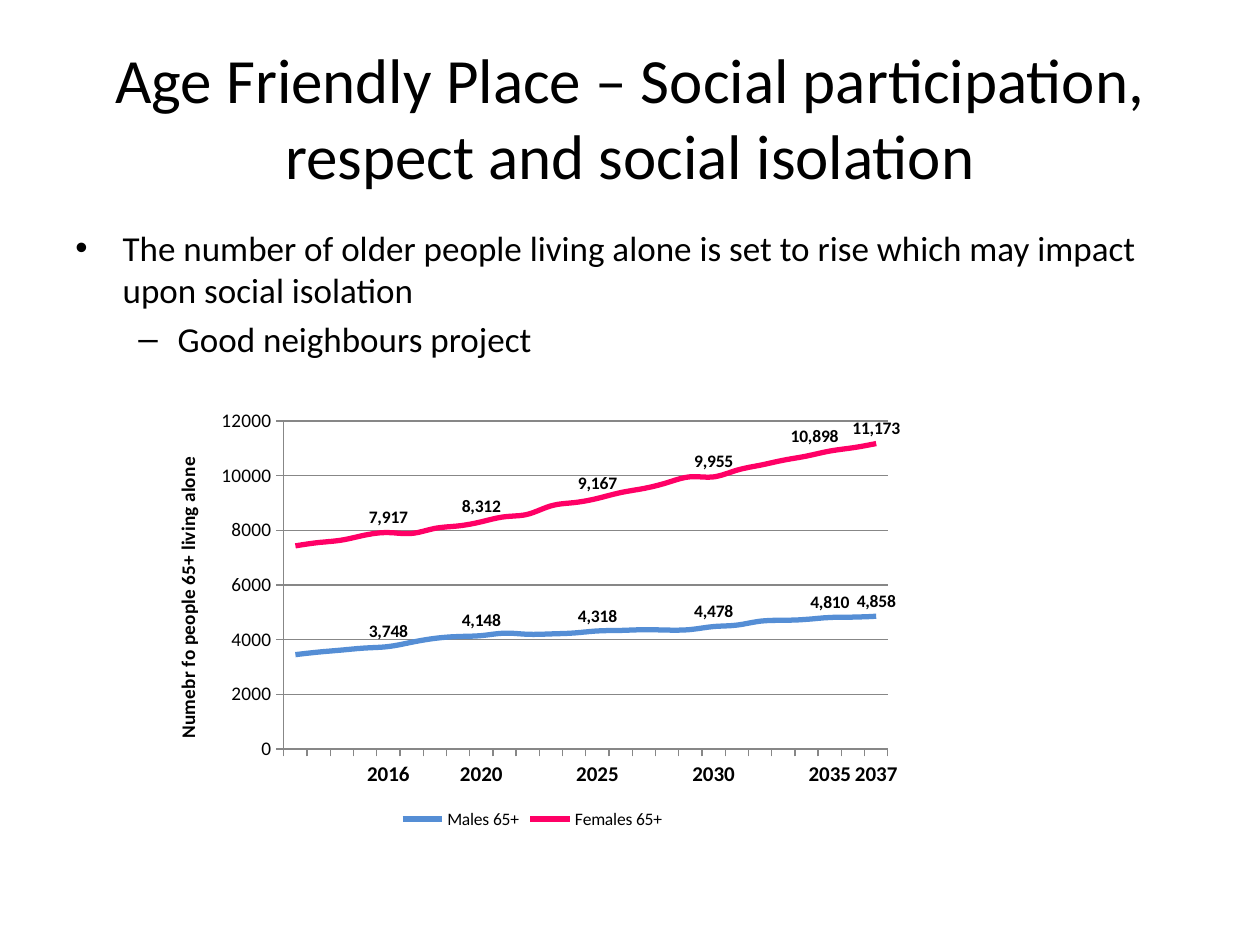
from lxml.etree import SubElement
from pptx import Presentation
from pptx.chart.data import CategoryChartData
from pptx.dml.color import RGBColor
from pptx.enum.chart import XL_CHART_TYPE, XL_LABEL_POSITION, XL_LEGEND_POSITION, XL_TICK_MARK
from pptx.enum.text import MSO_ANCHOR, PP_ALIGN
from pptx.oxml import parse_xml
from pptx.oxml.ns import nsdecls, qn
from pptx.util import Pt

BLACK = RGBColor(0x00, 0x00, 0x00)
GREY = RGBColor(0x87, 0x87, 0x87)
BLUE = RGBColor(0x55, 0x8E, 0xD5)
PINK = RGBColor(0xFF, 0x00, 0x66)

FIRST_YEAR, LAST_YEAR = 2012, 2037
LABELLED_YEARS = (2016, 2020, 2025, 2030, 2035, 2037)
MALES = (3452, 3546, 3620, 3694, 3748, 3904, 4046, 4114, 4148, 4236, 4196, 4210, 4244,
         4318, 4338, 4364, 4350, 4370, 4478, 4532, 4674, 4708, 4742, 4810, 4824, 4858)
FEMALES = (7432, 7553, 7644, 7826, 7917, 7886, 8069, 8160, 8312, 8495, 8588, 8893, 9014,
           9167, 9379, 9531, 9743, 9956, 9955, 10198, 10380, 10563, 10715, 10898, 11020, 11173)
SERIES = (("Males 65+", MALES, BLUE), ("Females 65+", FEMALES, PINK))


def manual_layout(**values):
    """Return a c:layout element with the given manual layout values."""
    items = "".join(f'<c:{tag} val="{val}"/>' for tag, val in values.items())
    return parse_xml(f'<c:layout {nsdecls("c")}><c:manualLayout>{items}'
                     '</c:manualLayout></c:layout>')


class SlideBuilder:
    font_name = "Calibri"

    def __init__(self, slide):
        self.s = slide

    def style(self, font, size, bold=False):
        for name, value in {"name": self.font_name, "size": Pt(size), "bold": bold}.items():
            setattr(font, name, value)
        font.color.rgb = BLACK

    def text(self, box, paragraphs, size, anchor=MSO_ANCHOR.TOP):
        """Add a text box; each paragraph is (text, format dict, bullet or None)."""
        tf = self.s.shapes.add_textbox(*map(Pt, box)).text_frame
        tf.word_wrap = True
        tf.vertical_anchor = anchor
        for i, (text, formats, bullet) in enumerate(paragraphs):
            p = tf.add_paragraph() if i else tf.paragraphs[0]
            for name, value in formats.items():
                setattr(p, name, value)
            if bullet:
                self.bullet(p, *bullet)
            r = p.add_run()
            r.text = text
            self.style(r.font, size)

    def bullet(self, p, char, left, hanging):
        pPr = p._p.get_or_add_pPr()
        pPr.set("marL", str(Pt(left)))
        pPr.set("indent", str(-Pt(hanging)))
        SubElement(pPr, qn("a:buFont"), typeface="Arial")
        SubElement(pPr, qn("a:buChar"), char=char)

    def line_chart(self, box, categories, series, axis_title):
        data = CategoryChartData(number_format="#,##0")
        data.categories = categories
        for name, values, _ in series:
            data.add_series(name, values)
        chart = self.s.shapes.add_chart(XL_CHART_TYPE.LINE, *map(Pt, box), data).chart
        self.style(chart.font, 11)
        chart.has_title = False
        chart.has_legend = True
        chart.legend.position = XL_LEGEND_POSITION.BOTTOM
        chart.legend.include_in_layout = False
        self.style(chart.legend.font, 10)
        self.axes(chart, axis_title)
        for ser, (_, _, color) in zip(chart.plots[0].series, series):
            self.series(ser, color, categories)

        plot_area = chart._chartSpace.chart.plotArea
        for old in plot_area.findall(qn("c:layout")):
            plot_area.remove(old)
        plot_area.insert(0, manual_layout(layoutTarget="inner", xMode="edge", yMode="edge",
                                          x=0.175, y=0.05, w=0.79, h=0.755))
        return chart

    def axes(self, chart, title):
        cat, val = chart.category_axis, chart.value_axis
        for axis, size, bold in ((cat, 12, True), (val, 11, False)):
            axis.major_tick_mark = XL_TICK_MARK.OUTSIDE
            axis.minor_tick_mark = XL_TICK_MARK.NONE
            axis.format.line.color.rgb = GREY
            self.style(axis.tick_labels.font, size, bold)
        skip = parse_xml(f'<c:tickLblSkip {nsdecls("c")} val="1"/>')
        cat._element.find(qn("c:noMultiLvlLbl")).addprevious(skip)

        for name, value in {"minimum_scale": 0, "maximum_scale": 12000, "major_unit": 2000,
                            "has_major_gridlines": True}.items():
            setattr(val, name, value)
        val.major_gridlines.format.line.color.rgb = GREY
        val.tick_labels.number_format = "General"
        val.tick_labels.number_format_is_linked = False
        p = val.axis_title.text_frame.paragraphs[0]
        r = p.add_run()
        r.text = title
        self.style(r.font, 11, True)

    def series(self, ser, color, categories):
        """Style a line and label only the points whose category has a name."""
        ser.smooth = True
        ser.format.line.color.rgb = color
        ser.format.line.width = Pt(3)
        labels = ser.data_labels
        for name, value in {"show_value": False, "number_format": "#,##0",
                            "number_format_is_linked": False}.items():
            setattr(labels, name, value)
        for i, category in enumerate(categories):
            if category:
                label = ser.points[i].data_label
                self.style(label.font, 10, True)
                label.position = XL_LABEL_POSITION.ABOVE

    def shift_label(self, ser, index, x):
        """Move one data label sideways by a fraction of the chart width."""
        for dLbl in ser.data_labels._element.findall(qn("c:dLbl")):
            idx = dLbl.find(qn("c:idx"))
            if idx.get("val") == str(index):
                idx.addnext(manual_layout(x=x, y=0))


def main():
    prs = Presentation()
    prs.slide_width, prs.slide_height = Pt(720), Pt(540)
    builder = SlideBuilder(prs.slides.add_slide(prs.slide_layouts[6]))

    builder.text((36, 126, 648, 356.4), [
        ("The number of older people living alone is set to rise which may impact "
         "upon social isolation", {}, ("•", 27, 27)),
        ("Good neighbours project", {"level": 1, "space_before": Pt(4)}, ("–", 58.5, 22.5)),
    ], 20)
    builder.text((36, 21.6, 648, 90), [
        ("Age Friendly Place – Social participation, respect and social isolation",
         {"alignment": PP_ALIGN.CENTER}, None),
    ], 36, MSO_ANCHOR.MIDDLE)

    categories = [str(year) if year in LABELLED_YEARS else ""
                  for year in range(FIRST_YEAR, LAST_YEAR + 1)]
    chart = builder.line_chart((85.7, 228.2, 437, 248.4), categories, SERIES,
                               "Numebr fo people 65+ living alone")
    builder.shift_label(chart.plots[0].series[1], 2035 - FIRST_YEAR, -0.02)
    prs.save("out.pptx")


if __name__ == "__main__":
    main()
